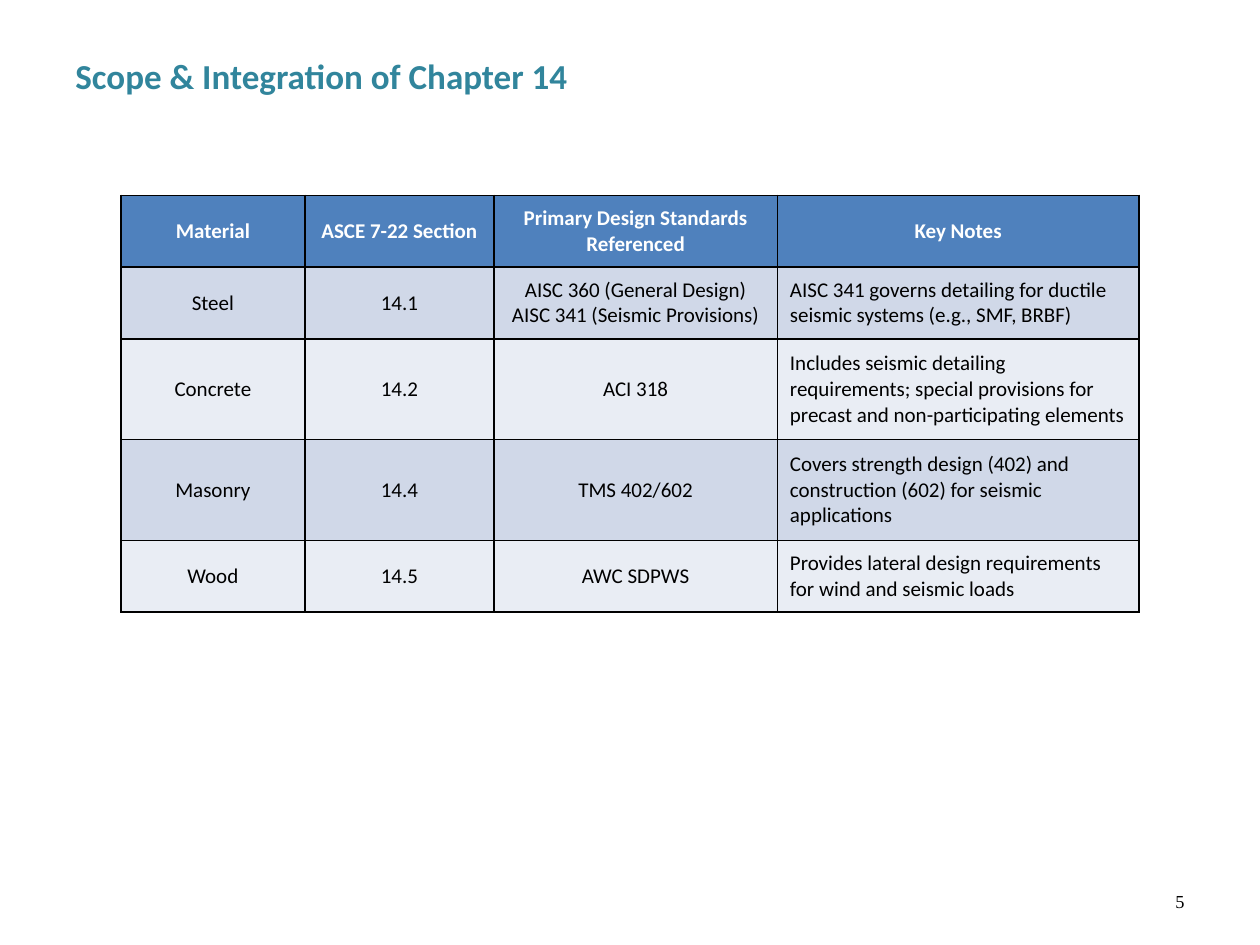
from lxml import etree
from pptx import Presentation
from pptx.dml.color import RGBColor
from pptx.enum import text
from pptx.oxml import ns
from pptx.util import Inches, Pt

HEADER_FILL, BAND_FILLS = "4F81BD", ("D0D8E8", "E9EDF4")
COL_WIDTHS = (1.46, 1.5, 2.25, 2.87)
ROW_HEIGHTS = (0.57, 0.57, 0.8, 0.8, 0.57)
ROWS = (
    ("Material", "ASCE 7-22 Section", "Primary Design Standards Referenced", "Key Notes"),
    ("Steel", "14.1", "AISC 360 (General Design)\vAISC 341 (Seismic Provisions)",
     "AISC 341 governs detailing for ductile seismic systems (e.g., SMF, BRBF)"),
    ("Concrete", "14.2", "ACI 318",
     "Includes seismic detailing requirements; special provisions for precast "
     "and non-participating elements"),
    ("Masonry", "14.4", "TMS 402/602",
     "Covers strength design (402) and construction (602) for seismic applications"),
    ("Wood", "14.5", "AWC SDPWS",
     "Provides lateral design requirements for wind and seismic loads"),
)


def rgb(value):
    """Turn a hex string into a colour."""
    return RGBColor.from_string(value)


def write(tf, content, color, align, **font):
    """Fill a text frame with one formatted paragraph."""
    tf.word_wrap = True
    p = tf.paragraphs[0]
    p.text = content
    p.alignment = align
    for r in p.runs:
        for name, value in font.items():
            setattr(r.font, name, value)
        r.font.color.rgb = rgb(color)


def add_text(s, box, content, color, align, anchor, **font):
    """Add a text box at the given place in inches."""
    tf = s.shapes.add_textbox(*map(Inches, box)).text_frame
    tf.vertical_anchor = anchor
    write(tf, content, color, align, **font)


def set_borders(cell, color, width):
    """Draw a solid line on all four sides of a cell."""
    tcPr = cell._tc.get_or_add_tcPr()
    for i, side in enumerate(("lnL", "lnR", "lnT", "lnB")):
        ln = etree.Element(ns.qn(f"a:{side}"), w=str(Pt(width)))
        fill = etree.SubElement(ln, ns.qn("a:solidFill"))
        etree.SubElement(fill, ns.qn("a:srgbClr"), val=color)
        tcPr.insert(i, ln)


def add_standards_table(s, left, top):
    """Add the table of materials and their design standards."""
    size = map(Inches, (left, top, sum(COL_WIDTHS), sum(ROW_HEIGHTS)))
    table = s.shapes.add_table(len(ROWS), len(COL_WIDTHS), *size).table
    for col, width in zip(table.columns, COL_WIDTHS):
        col.width = Inches(width)
    for i, (row, height) in enumerate(zip(table.rows, ROW_HEIGHTS)):
        row.height = Inches(height)
        header = i == 0
        for j, cell in enumerate(row.cells):
            note = not header and j == len(COL_WIDTHS) - 1
            align = text.PP_ALIGN.LEFT if note else text.PP_ALIGN.CENTER
            cell.vertical_anchor = text.MSO_ANCHOR.MIDDLE
            cell.fill.solid()
            cell.fill.fore_color.rgb = rgb(HEADER_FILL if header else BAND_FILLS[(i - 1) % 2])
            write(cell.text_frame, ROWS[i][j], "FFFFFF" if header else "000000", align,
                  name="Calibri", size=Pt(12), bold=header)
            set_borders(cell, "000000", 1)


def main():
    """Build the slide and save it."""
    prs = Presentation()
    prs.slide_width, prs.slide_height = Inches(10), Inches(7.5)
    s = prs.slides.add_slide(prs.slide_layouts[6])
    add_text(s, (7.17, 6.95, 2.33, 0.4), "5", "010000", text.PP_ALIGN.RIGHT,
             text.MSO_ANCHOR.MIDDLE, name="Times New Roman", size=Pt(10.5))
    add_text(s, (0.5, 0.38, 6.08, 0.44), "Scope & Integration of Chapter 14", "31859C",
             text.PP_ALIGN.LEFT, text.MSO_ANCHOR.TOP, name="Calibri", size=Pt(20), bold=True)
    add_standards_table(s, 0.96, 1.55)
    prs.save("out.pptx")


if __name__ == "__main__":
    main()
